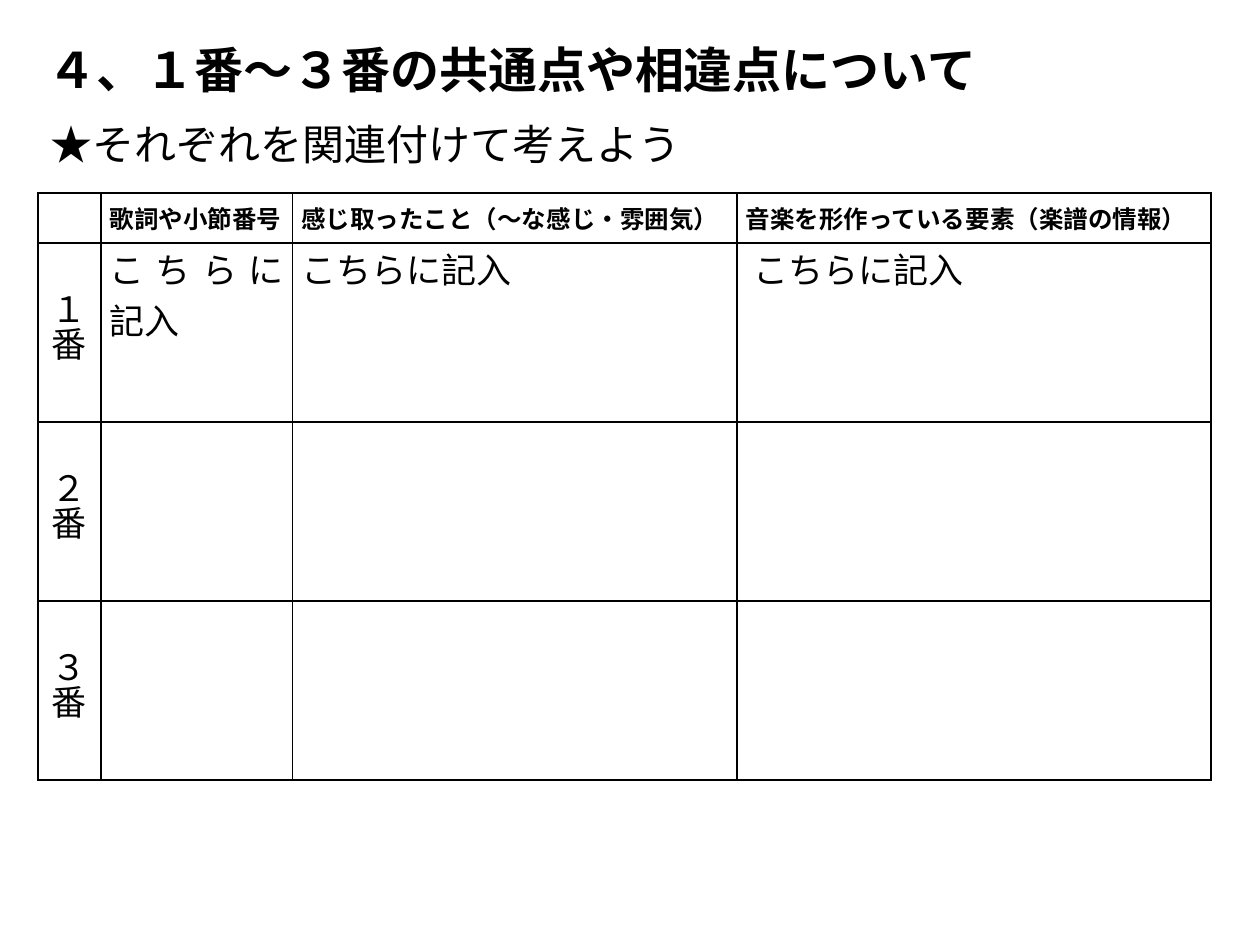
from lxml.etree import SubElement
from pptx import Presentation
from pptx.dml.color import RGBColor
from pptx.enum.shapes import MSO_SHAPE
from pptx.enum.text import MSO_ANCHOR as Anchor, PP_ALIGN as Align
from pptx.oxml.ns import qn
from pptx.util import Inches, Pt

# Content
TITLE = "４、１番～３番の共通点や相違点について"
SUBTITLE = "★それぞれを関連付けて考えよう"
ENTRY = "こちらに記入"
ROWS = [
    ["", "歌詞や小節番号", "感じ取ったこと（～な感じ・雰囲気）", "音楽を形作っている要素（楽譜の情報）"],
    ["１番", ENTRY, ENTRY, "\u00a0" + ENTRY],
    ["２番", "", "", ""],
    ["３番", "", "", ""],
]

# Layout in inches
COLUMN_WIDTHS = [0.5, 1.52, 3.53, 3.76]
ROW_HEIGHTS = [0.4] + [1.42] * 3
LEFT = 0.3
TABLE_TOP = 1.53
BLACK, WHITE = "000000", "FFFFFF"
JAPANESE_FONT = "Noto Sans CJK JP"


def color(value):
    return RGBColor.from_string(value)


def format_text(paragraph, size, font_name=JAPANESE_FONT, bold=False):
    for run in paragraph.runs:
        run.font.size = Pt(size)
        run.font.bold = bold
        run.font.color.rgb = color(BLACK)
        run.font.name = font_name
        east_asian = SubElement(run._r.get_or_add_rPr(), qn("a:ea"))
        east_asian.set("typeface", JAPANESE_FONT)


def fill_line(shape, text, size, font_name, bold=False):
    frame = shape.text_frame
    frame.text = text
    frame.word_wrap = True
    frame.vertical_anchor = Anchor.TOP
    frame.paragraphs[0].alignment = Align.LEFT
    format_text(frame.paragraphs[0], size, font_name, bold)


def set_borders(cell):
    properties = cell._tc.get_or_add_tcPr()
    for position, side in enumerate(("a:lnL", "a:lnR", "a:lnT", "a:lnB")):
        line = properties.makeelement(qn(side), {"w": str(Pt(1))})
        solid = SubElement(line, qn("a:solidFill"))
        SubElement(solid, qn("a:srgbClr")).set("val", BLACK)
        properties.insert(position, line)


def fill_cell(cell, text, is_header, is_label):
    cell.fill.background()
    set_borders(cell)
    cell.margin_left = cell.margin_right = Inches(0.07)
    cell.margin_top = cell.margin_bottom = 0
    cell.vertical_anchor = Anchor.MIDDLE if is_header or is_label else Anchor.TOP
    cell.text_frame.text = text
    paragraph = cell.text_frame.paragraphs[0]
    paragraph.alignment = Align.CENTER if is_label else Align.JUSTIFY
    if is_label and not is_header:
        paragraph.line_spacing = Pt(20)
    format_text(paragraph, 14 if is_header else 20, bold=is_header)


presentation = Presentation()
presentation.slide_width, presentation.slide_height = Inches(10), Inches(7.5)
slide = presentation.slides.add_slide(presentation.slide_layouts[5])

# Title
title = slide.shapes.title
title.left, title.top = Inches(0.28), Inches(0.26)
title.width, title.height = Inches(7.99), Inches(0.57)
fill_line(title, TITLE, 28, "Karla", bold=True)

# Table
table = slide.shapes.add_table(
    len(ROWS), len(COLUMN_WIDTHS), Inches(LEFT), Inches(TABLE_TOP),
    Inches(sum(COLUMN_WIDTHS)), Inches(sum(ROW_HEIGHTS))).table
table.horz_banding = False
for column, width in zip(table.columns, COLUMN_WIDTHS):
    column.width = Inches(width)
for row, height in zip(table.rows, ROW_HEIGHTS):
    row.height = Inches(height)
for row_index, texts in enumerate(ROWS):
    for column_index, text in enumerate(texts):
        fill_cell(table.cell(row_index, column_index), text,
                  row_index == 0, column_index == 0)

# Subtitle
subtitle = slide.shapes.add_shape(
    MSO_SHAPE.RECTANGLE, Inches(LEFT), Inches(0.89), Inches(5.31), Inches(0.5))
subtitle.shadow.inherit = False
subtitle.fill.solid()
subtitle.fill.fore_color.rgb = color(WHITE)
subtitle.line.fill.background()
fill_line(subtitle, SUBTITLE, 24, "Arial")

presentation.save("out.pptx")
